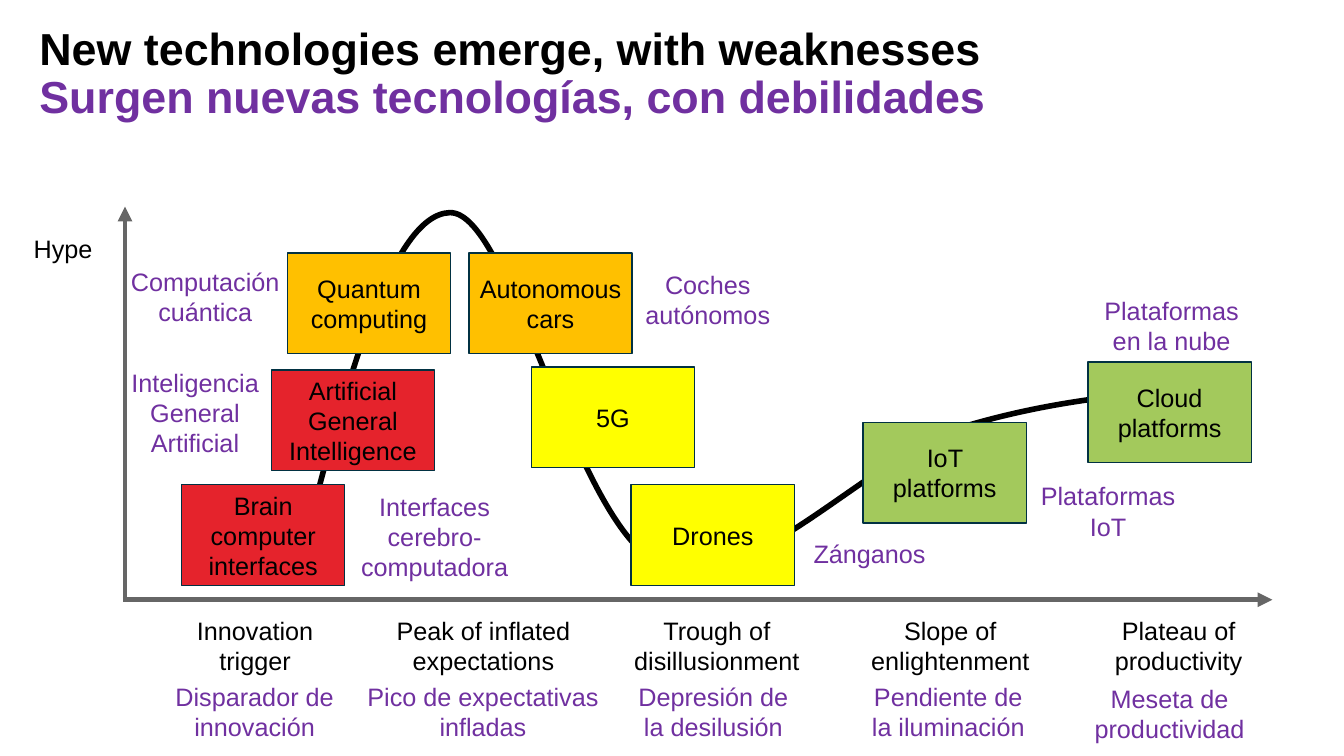
"""Build a bilingual slide that places emerging technologies on the hype curve."""
from dataclasses import dataclass

from lxml import etree
from pptx import Presentation
from pptx import util as u
from pptx.dml.color import RGBColor
from pptx.enum import shapes, text
from pptx.oxml import ns

PX = 9144
BLACK = RGBColor(0x00, 0x00, 0x00)
PURPLE = RGBColor(0x70, 0x30, 0xA0)
GREY = RGBColor(0x66, 0x66, 0x66)
NAVY = RGBColor(0x01, 0x31, 0x42)
RED = RGBColor(0xE5, 0x23, 0x2C)
ORANGE = RGBColor(0xFF, 0xC0, 0x00)
YELLOW = RGBColor(0xFF, 0xFF, 0x00)
GREEN = RGBColor(0xA3, 0xC9, 0x5C)

BOX_WIDTH, BOX_HEIGHT = 162, 100
STAGE_TOP = 605
BODY_FORMAT = {"name": "Arial", "size": u.Pt(18), "bold": False}
TITLE_FORMAT = {"name": "Arial", "size": u.Pt(32), "bold": True}


@dataclass(frozen=True)
class Technology:
    name: str
    left: int
    top: int
    fill: RGBColor


@dataclass(frozen=True)
class Label:
    wording: str
    left: int
    top: int
    width: int
    color: RGBColor = PURPLE
    lines: int = 2
    align: text.PP_ALIGN = text.PP_ALIGN.CENTER


@dataclass(frozen=True)
class Axis:
    start: tuple[int, int]
    end: tuple[int, int]


TECHNOLOGIES = [
    Technology("Quantum computing", 285, 251, ORANGE),
    Technology("Autonomous cars", 465, 251, ORANGE),
    Technology("5G", 527, 364, YELLOW),
    Technology("Drones", 626, 481, YELLOW),
    Technology("IoT platforms", 856, 419, GREEN),
    Technology("Brain computer interfaces", 180, 481, RED),
    Technology("Artificial General Intelligence", 269, 367, RED),
    Technology("Cloud platforms", 1079, 359, GREEN),
]

LABELS = [
    Label("Hype", 10, 227, 105, BLACK, lines=1),
    Label("Innovation trigger", 166, STAGE_TOP, 174, BLACK),
    Label("Peak of inflated expectations", 383, STAGE_TOP, 193, BLACK),
    Label("Trough of disillusionment", 619, STAGE_TOP, 184, BLACK),
    Label("Slope of enlightenment", 847, STAGE_TOP, 191, BLACK),
    Label("Plateau of productivity", 1081, STAGE_TOP, 176, BLACK),
    Label("Disparador de innovación", 162, 671, 181),
    Label("Pico de expectativas infladas", 353, 671, 252),
    Label("Depresión de la desilusión", 617, 671, 181),
    Label("Pendiente de la iluminación", 844, 671, 193),
    Label("Meseta de productividad", 1072, 673, 176),
    Label("Interfaces cerebro-computadora", 340, 482, 182, lines=3),
    Label("Inteligencia General Artificial", 103, 359, 181, lines=3),
    Label("Computación cuántica", 119, 259, 169),
    Label("Coches autónomos", 616, 262, 172),
    Label("Zánganos", 797, 529, 141, lines=1, align=text.PP_ALIGN.LEFT),
    Label("Plataformas IoT", 1018, 472, 162),
    Label("Plataformas en la nube", 1081, 288, 162),
]

AXES = [Axis((124, 595), (124, 205)), Axis((122, 595), (1262, 595))]

CURVE_START = (293, 574)
CURVE_SEGMENTS = [
    ((339, 394), (386, 213), (446, 211)),
    ((507, 209), (570, 525), (656, 560)),
    ((741, 595), (859, 453), (957, 423)),
    ((1054, 394), (1147, 388), (1241, 382)),
]


def px(*lengths: int) -> list[u.Emu]:
    """Turn lengths in px into EMU."""
    return [u.Emu(length * PX) for length in lengths]


def format_font(font, values: dict, color: RGBColor) -> None:
    """Apply format values and a colour to a font."""
    for attribute, value in values.items():
        setattr(font, attribute, value)
    font.color.rgb = color


def fill_paragraph(frame, wording: str, color: RGBColor, align: text.PP_ALIGN) -> None:
    """Write one formatted paragraph into a text frame."""
    frame.word_wrap = True
    paragraph = frame.paragraphs[0]
    paragraph.alignment = align
    run = paragraph.add_run()
    run.text = wording
    format_font(run.font, BODY_FORMAT, color)


def draw_title(slide) -> None:
    """Write the English and Spanish headings in the title placeholder."""
    heading = slide.shapes.title
    heading.left, heading.top, heading.width, heading.height = px(39, 0, 1193, 149)
    frame = heading.text_frame
    settings = {"margin_left": 0, "margin_top": 0, "margin_right": 0, "margin_bottom": 0,
                "word_wrap": True, "auto_size": text.MSO_AUTO_SIZE.NONE,
                "vertical_anchor": text.MSO_ANCHOR.MIDDLE}
    for attribute, value in settings.items():
        setattr(frame, attribute, value)
    paragraph = frame.paragraphs[0]
    paragraph.alignment = text.PP_ALIGN.LEFT
    paragraph.line_spacing = 0.9
    english = paragraph.add_run()
    english.text = "New technologies emerge, with weaknesses"
    paragraph.add_line_break()
    spanish = paragraph.add_run()
    spanish.text = "Surgen nuevas tecnologías, con debilidades"
    format_font(english.font, TITLE_FORMAT, BLACK)
    format_font(spanish.font, TITLE_FORMAT, PURPLE)


def draw_curve(slide) -> None:
    """Draw the hype curve as one open outline of cubic segments."""
    knots = [segment[-1] for segment in CURVE_SEGMENTS]
    builder = slide.shapes.build_freeform(*CURVE_START, scale=PX)
    builder.add_line_segments(knots, close=False)
    curve = builder.convert_to_shape()
    curve.shadow.inherit = False
    curve.fill.background()
    curve.line.color.rgb = BLACK
    curve.line.width = u.Pt(4)
    left = min(x for x, _ in [CURVE_START, *knots])
    top = min(y for _, y in [CURVE_START, *knots])
    straights = list(curve.element.iter(ns.qn("a:lnTo")))
    for straight, segment in zip(straights, CURVE_SEGMENTS):
        bend = etree.Element(ns.qn("a:cubicBezTo"))
        for x, y in segment:
            etree.SubElement(bend, ns.qn("a:pt"), x=str(x - left), y=str(y - top))
        straight.getparent().replace(straight, bend)


def draw_technology(slide, technology: Technology) -> None:
    """Draw one technology box on the curve."""
    box = slide.shapes.add_shape(
        shapes.MSO_SHAPE.RECTANGLE,
        *px(technology.left, technology.top, BOX_WIDTH, BOX_HEIGHT))
    box.shadow.inherit = False
    box.fill.solid()
    box.fill.fore_color.rgb = technology.fill
    box.line.color.rgb = NAVY
    box.line.width = u.Pt(1)
    box.text_frame.vertical_anchor = text.MSO_ANCHOR.MIDDLE
    fill_paragraph(box.text_frame, technology.name, BLACK, text.PP_ALIGN.CENTER)


def draw_axis(slide, axis: Axis) -> None:
    """Draw one axis with an arrowhead at its end."""
    arrow = slide.shapes.add_connector(
        shapes.MSO_CONNECTOR.STRAIGHT, *px(*axis.start, *axis.end))
    arrow.line.color.rgb = GREY
    arrow.line.width = u.Pt(3.5)
    etree.SubElement(arrow.line._get_or_add_ln(), ns.qn("a:tailEnd"), type="triangle")
    etree.SubElement(arrow.element.spPr, ns.qn("a:effectLst"))


def draw_label(slide, label: Label) -> None:
    """Write one label, as high as its lines need."""
    height = 10 + round(30.3 * label.lines)
    caption = slide.shapes.add_textbox(*px(label.left, label.top, label.width, height))
    fill_paragraph(caption.text_frame, label.wording, label.color, label.align)
    caption.text_frame.auto_size = text.MSO_AUTO_SIZE.SHAPE_TO_FIT_TEXT


def main() -> None:
    """Build and save the slide."""
    deck = Presentation()
    deck.slide_width, deck.slide_height = px(1333, 750)
    slide = deck.slides.add_slide(deck.slide_layouts[5])
    draw_title(slide)
    draw_curve(slide)
    for technology in TECHNOLOGIES:
        draw_technology(slide, technology)
    for axis in AXES:
        draw_axis(slide, axis)
    for label in LABELS:
        draw_label(slide, label)
    deck.save("out.pptx")


if __name__ == "__main__":
    main()
